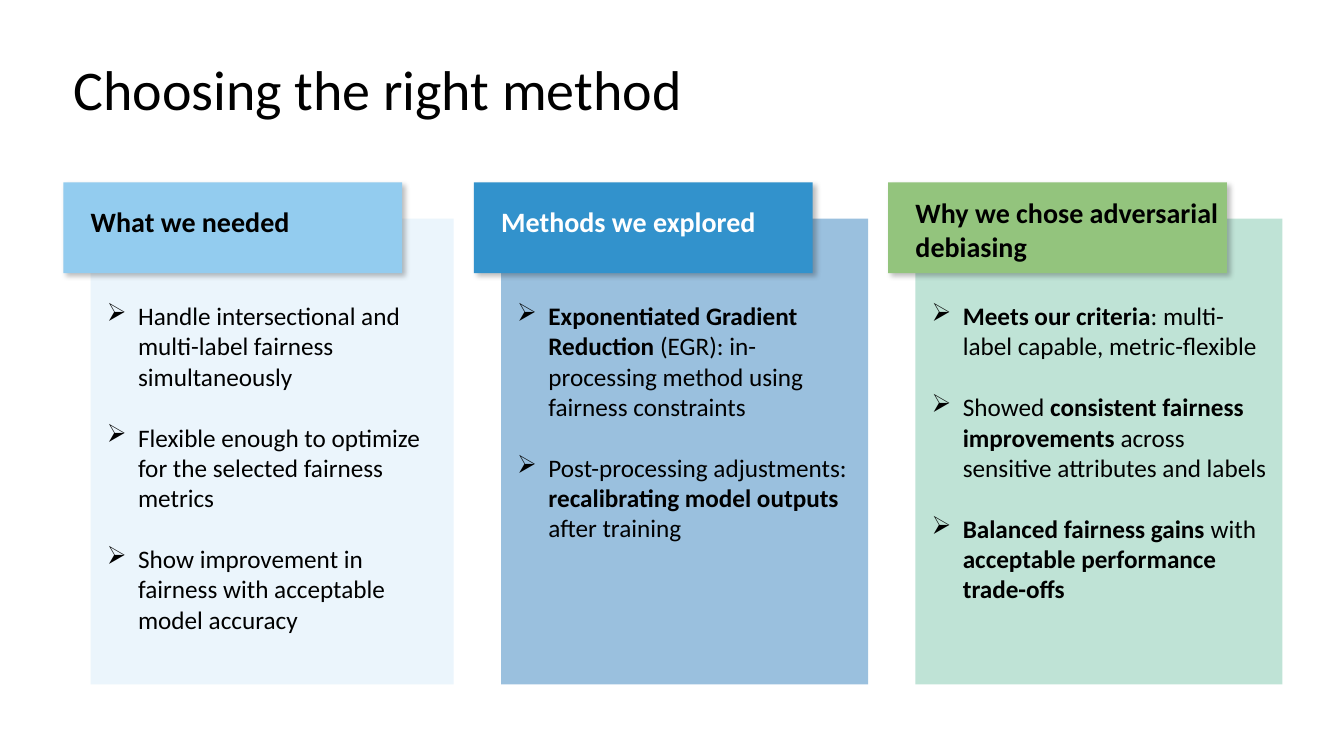
from lxml.etree import SubElement
from pptx import Presentation
from pptx.dml.color import RGBColor
from pptx.enum.shapes import MSO_SHAPE
from pptx.enum.text import MSO_ANCHOR, PP_ALIGN
from pptx.oxml import parse_xml
from pptx.oxml.ns import nsdecls, qn
from pptx.util import Inches, Pt

FONT = "Calibri"
COLORS = {
    "black": "000000", "white": "FFFFFF",
    "ice": "EBF5FC", "sky": "93CCEF",
    "steel": "9AC0DE", "blue": "3292CC",
    "mint": "BFE3D6", "green": "93C47D",
}

# Bold words stand between double asterisks.
COLUMNS = [
    {"left": 0.9, "width": 3.6, "panel": "ice", "tab": "sky",
     "ink": "black", "head": "What we needed", "head_top": 2.03,
     "text_width": 3.48,
     "points": [
         "Handle intersectional and multi-label fairness simultaneously",
         "Flexible enough to optimize for the selected fairness metrics",
         "Show improvement in fairness with acceptable model accuracy"]},
    {"left": 4.97, "width": 3.64, "panel": "steel", "tab": "blue",
     "ink": "white", "head": "Methods we explored", "head_top": 2.03,
     "text_width": 3.64,
     "points": [
         "**Exponentiated Gradient Reduction **(EGR): in-processing method "
         "using fairness constraints",
         "Post-processing adjustments: **recalibrating model outputs **"
         "after training"]},
    {"left": 9.08, "width": 3.64, "panel": "mint", "tab": "green",
     "ink": "black", "head": "Why we chose adversarial debiasing",
     "head_top": 1.94, "text_width": 3.64,
     "points": [
         "**Meets our criteria**: multi-label capable, metric-flexible",
         "Showed **consistent fairness improvements** across sensitive "
         "attributes and labels",
         "**Balanced fairness gains **with **acceptable performance "
         "trade-offs**"]},
]


def rgb(name):
    return RGBColor.from_string(COLORS[name])


def style(font, size, color="black", bold=False):
    font.name, font.size, font.bold = FONT, Pt(size), bold
    font.color.rgb = rgb(color)


def add_title(slide, text):
    title = slide.shapes.title
    title.left, title.top = Inches(0.63), Inches(0.59)
    title.width, title.height = Inches(11.5), Inches(1.45)
    frame = title.text_frame
    frame.text = text
    frame.vertical_anchor = MSO_ANCHOR.TOP
    para = frame.paragraphs[0]
    para.alignment, para.line_spacing = PP_ALIGN.LEFT, 0.85
    style(para.runs[0].font, 40)


def add_rect(slide, left, top, width, height, color):
    rect = slide.shapes.add_shape(
        MSO_SHAPE.RECTANGLE, Inches(left), Inches(top),
        Inches(width), Inches(height))
    rect.shadow.inherit = False
    rect.fill.solid()
    rect.fill.fore_color.rgb = rgb(color)
    rect.line.fill.background()
    return rect


def add_shadow(shape):
    effects = shape._element.spPr.find(qn("a:effectLst"))
    effects.append(parse_xml(
        f'<a:outerShdw {nsdecls("a")} blurRad="{Pt(4)}" dist="{Pt(3)}" '
        'dir="2700000" algn="tl" rotWithShape="0">'
        f'<a:srgbClr val="{COLORS["black"]}"><a:alpha val="25000"/>'
        '</a:srgbClr></a:outerShdw>'))


def add_frame(slide, left, top, width, height, pad_x=0, pad_y=0):
    """Add a wrapping text box and return its text frame."""
    box = slide.shapes.add_textbox(
        Inches(left), Inches(top), Inches(width), Inches(height))
    frame = box.text_frame
    frame.word_wrap = True
    frame.margin_left = frame.margin_right = Inches(pad_x)
    frame.margin_top = frame.margin_bottom = Inches(pad_y)
    return frame


def add_bullet(para):
    props = para._p.get_or_add_pPr()
    props.set("marL", str(Inches(0.31)))
    props.set("indent", str(-Inches(0.31)))
    tint = SubElement(props, qn("a:buClr"))
    SubElement(tint, qn("a:srgbClr"), val=COLORS["black"])
    SubElement(props, qn("a:buChar"), char="➢")


def add_points(frame, points):
    for i, point in enumerate(points):
        para = frame.add_paragraph() if i else frame.paragraphs[0]
        if i:
            para.space_before = Pt(22)
        add_bullet(para)
        for j, part in enumerate(point.split("**")):
            if part:
                run = para.add_run()
                run.text = part
                style(run.font, 18, bold=j % 2 == 1)


def add_column(slide, col):
    left = col["left"]
    add_rect(slide, left, 2.17, col["width"], 4.62, col["panel"])
    body = add_frame(slide, left, 2.86, col["text_width"], 3.84, 0.16, 0.12)
    add_points(body, col["points"])
    add_shadow(add_rect(slide, left - 0.27, 1.81, 3.36, 0.9, col["tab"]))
    head = add_frame(slide, left, col["head_top"], 3.19, 0.39)
    head.text = col["head"]
    style(head.paragraphs[0].runs[0].font, 20, col["ink"], True)


def main():
    deck = Presentation()
    deck.slide_width, deck.slide_height = Inches(13.33), Inches(7.5)
    slide = deck.slides.add_slide(deck.slide_layouts[5])
    add_title(slide, "Choosing the right method")
    for col in COLUMNS:
        add_column(slide, col)
    deck.save("out.pptx")


if __name__ == "__main__":
    main()
